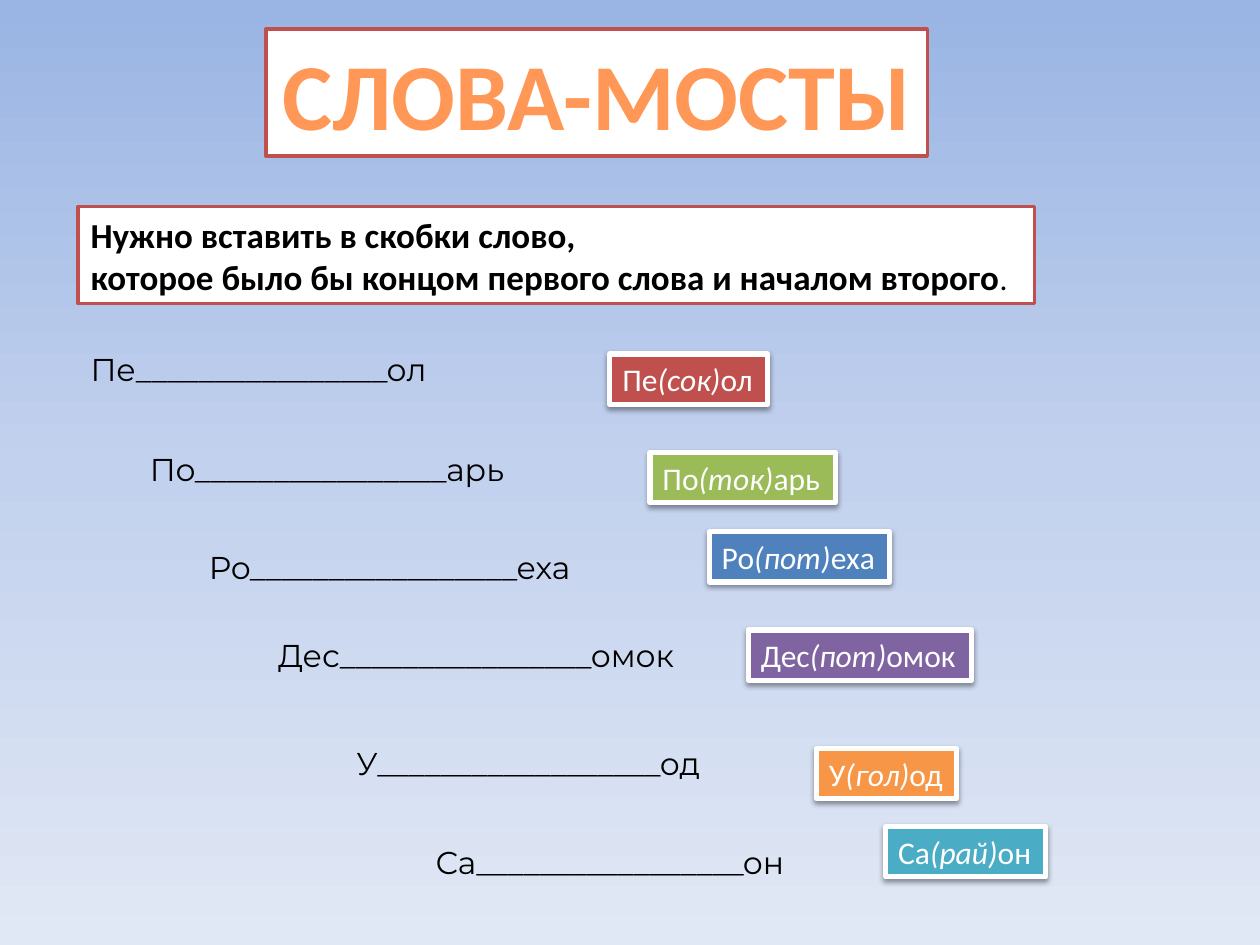
from lxml.etree import SubElement
from pptx import Presentation
from pptx.dml.color import RGBColor
from pptx.enum.shapes import MSO_SHAPE
from pptx.enum.text import MSO_AUTO_SIZE, PP_ALIGN
from pptx.oxml.ns import qn
from pptx.util import Inches, Pt

BLACK = RGBColor(0x00, 0x00, 0x00)
WHITE = RGBColor(0xFF, 0xFF, 0xFF)
RED = RGBColor(0xC0, 0x50, 0x4D)
GREEN = RGBColor(0x9B, 0xBB, 0x59)
BLUE = RGBColor(0x4F, 0x81, 0xBD)
PURPLE = RGBColor(0x80, 0x64, 0xA2)
ORANGE = RGBColor(0xF7, 0x96, 0x46)
TEAL = RGBColor(0x4B, 0xAC, 0xC6)
SKY = ((0, RGBColor(0x9A, 0xB5, 0xE4)), (50, RGBColor(0xC2, 0xD1, 0xED)),
       (100, RGBColor(0xE1, 0xE8, 0xF5)))
FLAME = ((0, RGBColor(0x9D, 0x47, 0x00)), (78, RGBColor(0xFF, 0x98, 0x56)),
         (100, RGBColor(0xFF, 0xF5, 0xF1)))
LINE_HEIGHT = 0.4

PUZZLES = (
    ("Пе", "сок", "ол", 16, (0.62, 2.73, 2.95), (4.84, 2.81, 1.25), RED),
    ("По", "ток", "арь", 16, (1.09, 3.52, 3.09), (5.16, 3.59, 1.47), GREEN),
    ("Ро", "пот", "еха", 17, (1.56, 4.3, 3.2), (5.63, 4.22, 1.43), BLUE),
    ("Дес", "пот", "омок", 16, (2.11, 5, 3.48), (5.94, 5, 1.77), PURPLE),
    ("У", "гол", "од", 18, (2.73, 5.86, 2.98), (6.48, 5.94, 1.11), ORANGE),
    ("Са", "рай", "он", 17, (3.36, 6.64, 3.06), (7.03, 6.56, 1.27), TEAL),
)


def set_gradient(fill, owner, stops):
    """Give a fill a top-to-bottom gradient with the given stops."""
    fill.gradient()
    fill.gradient_angle = 270
    stop_list = next(owner.iter(qn("a:gsLst")))
    for stop in list(stop_list):
        stop_list.remove(stop)
    for percent, color in stops:
        stop = SubElement(stop_list, qn("a:gs"), pos=str(percent * 1000))
        SubElement(stop, qn("a:srgbClr"), val=str(color))


def add_shadow(shape):
    """Put a soft shadow below a shape."""
    effects = shape._element.spPr.find(qn("a:effectLst"))
    shadow = SubElement(effects, qn("a:outerShdw"), blurRad=str(Pt(3.1)),
                        dist=str(Pt(1.6)), dir="5400000", rotWithShape="0")
    color = SubElement(shadow, qn("a:srgbClr"), val=str(BLACK))
    SubElement(color, qn("a:alpha"), val="38000")


def fit_text(shape):
    """Let a shape follow its unwrapped text."""
    frame = shape.text_frame
    frame.word_wrap = False
    frame.auto_size = MSO_AUTO_SIZE.SHAPE_TO_FIT_TEXT
    return frame


def style(para, size, color, name="Calibri", bold=False, align=PP_ALIGN.LEFT):
    """Set the font and alignment of a paragraph."""
    para.alignment = align
    para.font.name = name
    para.font.size = Pt(size)
    para.font.bold = bold
    para.font.color.rgb = color


def add_panel(page, box, fill, line, width):
    """Add a bordered rectangle."""
    panel = page.shapes.add_shape(MSO_SHAPE.RECTANGLE, *map(Inches, box))
    panel.shadow.inherit = False
    panel.fill.solid()
    panel.fill.fore_color.rgb = fill
    panel.line.color.rgb = line
    panel.line.width = Pt(width)
    return panel


def add_title(page, box):
    """Add the slide title."""
    para = fit_text(add_panel(page, box, WHITE, RED, 2)).paragraphs[0]
    style(para, 54, ORANGE, bold=True, align=PP_ALIGN.CENTER)
    span = para.add_run()
    span.text = "СЛОВА-МОСТЫ"
    set_gradient(span.font.fill, span._r, FLAME)


def add_task(page, box):
    """Add the instruction for the puzzles."""
    frame = fit_text(add_panel(page, box, WHITE, RED, 2))
    first, second = frame.paragraphs[0], frame.add_paragraph()
    for para, text in (
        (first, "Нужно вставить в скобки слово,"),
        (second, "которое было бы концом первого слова и началом второго"),
    ):
        style(para, 20, BLACK, bold=True)
        para.add_run().text = text
    stop = second.add_run()
    stop.text = "."
    stop.font.size = Pt(18)
    stop.font.bold = False


def add_question(page, box, text):
    """Add a word pair with its gap."""
    frame = fit_text(page.shapes.add_textbox(*map(Inches, box)))
    para = frame.paragraphs[0]
    para.add_run().text = text
    style(para, 18, BLACK, "Montserrat")


def add_answer(page, box, parts, color):
    """Add a coloured card with the bridge word in italics."""
    card = add_panel(page, box, color, WHITE, 3)
    add_shadow(card)
    para = fit_text(card).paragraphs[0]
    style(para, 18, WHITE)
    start, bridge, end = parts
    for text, italic in ((start, False), (f"({bridge})", True), (end, False)):
        span = para.add_run()
        span.text = text
        span.font.italic = italic


def main():
    """Build the slide and save it."""
    deck = Presentation()
    deck.slide_width, deck.slide_height = Inches(10), Inches(7.5)
    page = deck.slides.add_slide(deck.slide_layouts[6])
    set_gradient(page.background.fill, page._element, SKY)
    add_task(page, (0.62, 1.64, 7.59, 0.77))
    for start, bridge, end, gap, question, answer, color in PUZZLES:
        add_question(page, (*question, LINE_HEIGHT), start + "_" * gap + end)
        add_answer(page, (*answer, LINE_HEIGHT), (start, bridge, end), color)
    add_title(page, (2.11, 0.23, 5.25, 1.01))
    deck.save("out.pptx")


if __name__ == "__main__":
    main()
